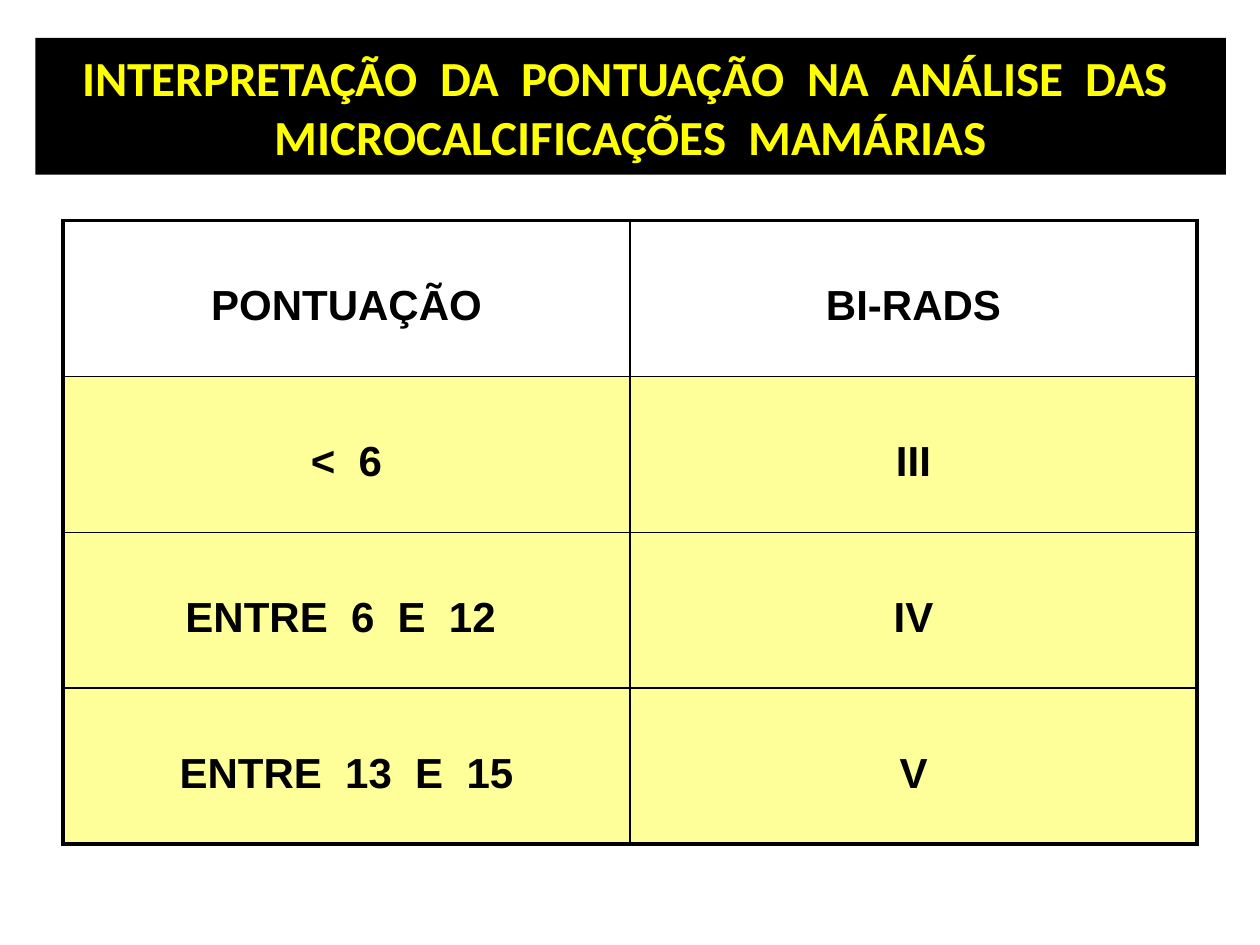
from dataclasses import dataclass
from typing import Any

from lxml.etree import SubElement
from pptx import Presentation
from pptx.dml.color import RGBColor
from pptx.enum.shapes import MSO_SHAPE as Shape
from pptx.enum.text import MSO_ANCHOR as Anchor, PP_ALIGN as Align
from pptx.oxml.ns import qn
from pptx.util import Inches, Pt

BLACK = RGBColor(0, 0, 0)
WHITE = RGBColor(255, 255, 255)
YELLOW = RGBColor(255, 255, 0)
CREAM = RGBColor(255, 255, 153)

TITLE = "INTERPRETAÇÃO  DA  PONTUAÇÃO  NA  ANÁLISE  DAS  MICROCALCIFICAÇÕES  MAMÁRIAS"
SCORES = [
    ("PONTUAÇÃO", "BI-RADS"),
    ("<  6", "III"),
    ("ENTRE  6  E  12 ", "IV"),
    ("ENTRE  13  E  15", "V"),
]


@dataclass
class ScoreSlide:
    deck: Any
    page: Any
    outer: float = 2.25
    inner: float = 1

    def place(self, left, top, width, height):
        wide, high = self.deck.slide_width, self.deck.slide_height
        return [int(wide * left), int(high * top), int(wide * width), int(high * height)]

    def add_text(self, para, text, font, size, color):
        para.alignment = Align.CENTER
        span = para.add_run()
        span.text = text
        span.font.name = font
        span.font.size = Pt(size)
        span.font.bold = True
        span.font.color.rgb = color

    def banner(self, text, *share):
        box = self.page.shapes.add_shape(Shape.RECTANGLE, *self.place(*share))
        box.shadow.inherit = False
        box.fill.solid()
        box.fill.fore_color.rgb = BLACK
        box.line.fill.background()
        frame = box.text_frame
        frame.word_wrap = True
        frame.vertical_anchor = Anchor.MIDDLE
        self.add_text(frame.paragraphs[0], text, "Calibri", 28, YELLOW)

    def borders(self, cell, edges):
        props = cell._tc.get_or_add_tcPr()
        for index, (side, is_outer) in enumerate(edges.items()):
            width = Pt(self.outer if is_outer else self.inner)
            line = props.makeelement(qn(f"a:ln{side}"), {"w": str(width)})
            fill = SubElement(line, qn("a:solidFill"))
            SubElement(fill, qn("a:srgbClr"), val=str(BLACK))
            props.insert(index, line)

    def table(self, rows, *share):
        last_row, last_col = len(rows) - 1, len(rows[0]) - 1
        grid = self.page.shapes.add_table(
            len(rows), len(rows[0]), *self.place(*share)
        ).table
        for r, row in enumerate(rows):
            for c, text in enumerate(row):
                cell = grid.cell(r, c)
                cell.fill.solid()
                cell.fill.fore_color.rgb = CREAM if r else WHITE
                para = cell.text_frame.paragraphs[0]
                para.line_spacing = 2.2
                para.space_before = Pt(4.8)
                self.add_text(para, text, "Arial", 24, BLACK)
                self.borders(cell, {
                    "L": c == 0, "R": c == last_col,
                    "T": r == 0, "B": r == last_row,
                })


def main():
    deck = Presentation()
    deck.slide_width, deck.slide_height = Inches(10), Inches(7.5)
    slide = ScoreSlide(deck, deck.slides.add_slide(deck.slide_layouts[6]))
    slide.banner(TITLE, 0.028, 0.04, 0.945, 0.145)
    slide.table(SCORES, 0.05, 7 / 30, 0.9, 0.66)
    deck.save("out.pptx")


if __name__ == "__main__":
    main()
